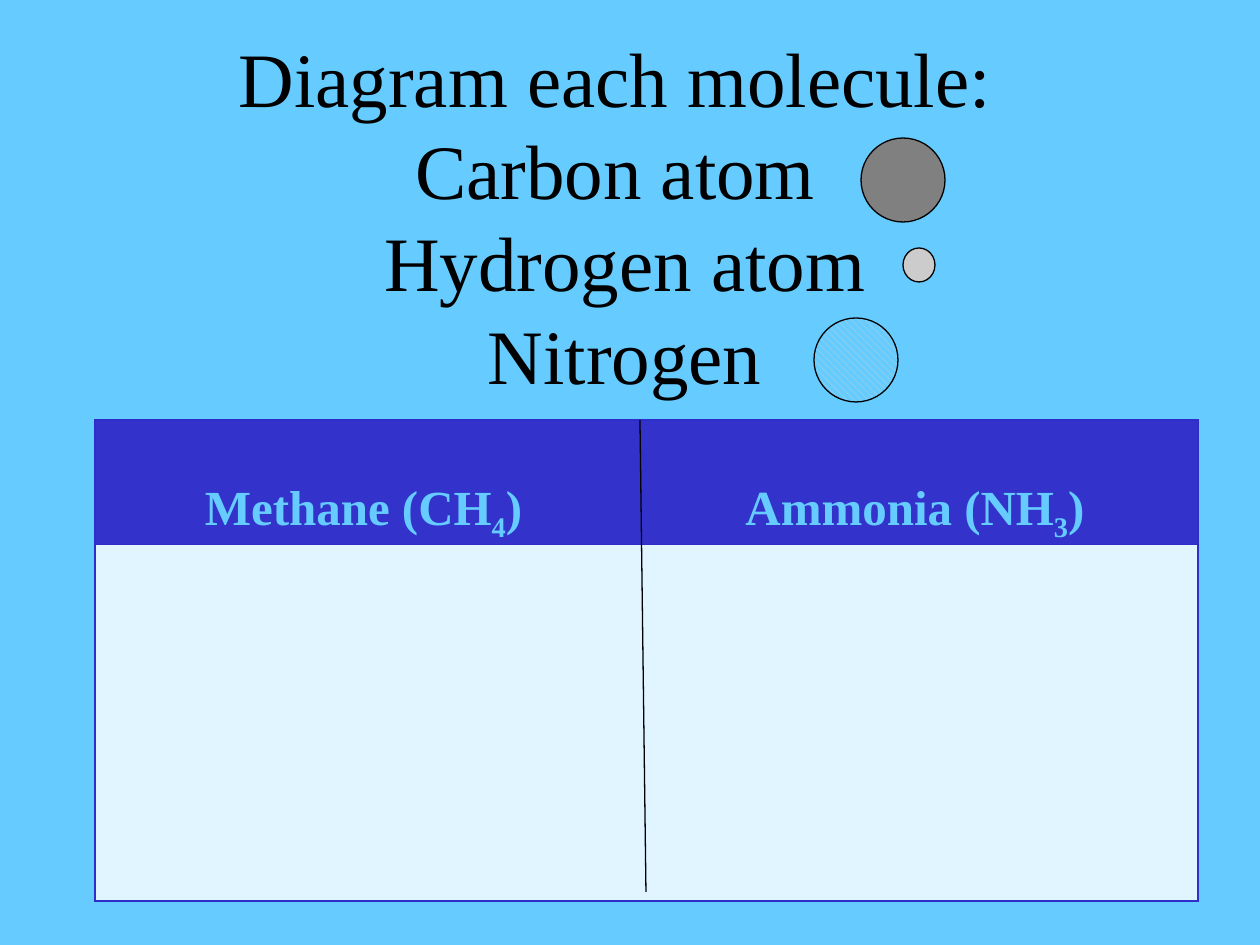
from typing import NamedTuple

from lxml import etree
from pptx import Presentation
from pptx.dml.color import RGBColor
from pptx.enum.dml import MSO_PATTERN
from pptx.enum.shapes import MSO_CONNECTOR, MSO_SHAPE
from pptx.enum.text import MSO_ANCHOR, MSO_AUTO_SIZE, PP_ALIGN
from pptx.oxml.ns import qn
from pptx.util import Emu, Pt

OVAL = MSO_SHAPE.OVAL
LINE = MSO_CONNECTOR.STRAIGHT
HATCH = MSO_PATTERN.WIDE_DOWNWARD_DIAGONAL
MIDDLE = MSO_ANCHOR.MIDDLE
CENTER = PP_ALIGN.CENTER
FIXED = MSO_AUTO_SIZE.NONE

FACE = "Times New Roman"
SKY, BLACK, GREY, SILVER = "66CCFF", "000000", "808080", "CCCCCC"
HEAD, BODY, EDGE = "3333CC", "E0F5FF", "2E2ECB"
THIN = Pt(0.75)


class Atom(NamedTuple):
    left: int
    top: int
    width: int
    height: int
    color: str
    hatched: bool = False


class Formula(NamedTuple):
    name: str
    count: str


ATOMS = [
    Atom(861, 138, 84, 84, GREY),
    Atom(903, 248, 32, 34, SILVER),
    Atom(814, 318, 84, 84, SILVER, True),
]
FORMULAS = [Formula("Methane (CH", "4"), Formula("Ammonia (NH", "3")]
COLUMNS = [537, 566]
ROWS = [116, 357]


def px(count: int) -> Emu:
    return Emu(round(count * 914400 / 126))


def rgb(color: str) -> RGBColor:
    return RGBColor.from_string(color)


def style(font, size: int, color: str, bold: bool = False) -> None:
    font.name = FACE
    font.size = Pt(size)
    font.bold = bold
    font.color.rgb = rgb(color)


def add_title(slide) -> None:
    title = slide.shapes.title
    title.left, title.top = px(53), px(10)
    title.width, title.height = px(1144), px(410)
    frame = title.text_frame
    frame.word_wrap = True
    frame.auto_size = FIXED
    frame.vertical_anchor = MIDDLE
    frame.text = "Diagram each molecule: \vCarbon atom \vHydrogen atom\vNitrogen"
    text = frame.paragraphs[0]
    text.alignment = CENTER
    style(text.font, 44, BLACK)


def add_atom(slide, atom: Atom) -> None:
    shape = slide.shapes.add_shape(OVAL, *map(px, atom[:4]))
    shape.shadow.inherit = False
    if atom.hatched:
        shape.fill.patterned()
        shape.fill.pattern = HATCH
        shape.fill.fore_color.rgb = rgb(atom.color)
        shape.fill.back_color.rgb = rgb(SKY)
    else:
        shape.fill.solid()
        shape.fill.fore_color.rgb = rgb(atom.color)
    shape.line.color.rgb = rgb(BLACK)
    shape.line.width = THIN


def set_edge(cell, side: str, shown: bool) -> None:
    props = cell._tc.get_or_add_tcPr()
    edge = etree.SubElement(props, qn(f"a:ln{side}"), w=str(THIN))
    if shown:
        fill = etree.SubElement(edge, qn("a:solidFill"))
        etree.SubElement(fill, qn("a:srgbClr"), val=EDGE)
    else:
        etree.SubElement(edge, qn("a:noFill"))


def write_head(cell, item: Formula) -> None:
    text = cell.text_frame.paragraphs[0]
    text.alignment = CENTER
    text.line_spacing = 2.0
    for part in (item.name, item.count, ")"):
        run = text.add_run()
        run.text = part
        style(run.font, 28, SKY, True)
        if part == item.count:
            run.font._element.set("baseline", "-25000")


def add_grid(slide) -> None:
    frame = slide.shapes.add_table(
        len(ROWS), len(COLUMNS), px(95), px(420), px(sum(COLUMNS)), px(sum(ROWS))
    )
    table = frame.table
    table.horz_banding = False
    for column, width in zip(table.columns, COLUMNS):
        column.width = px(width)
    for row, height in zip(table.rows, ROWS):
        row.height = px(height)
    for y in range(len(ROWS)):
        for x in range(len(COLUMNS)):
            cell = table.cell(y, x)
            cell.margin_left = cell.margin_right = px(9)
            cell.margin_top = cell.margin_bottom = 0
            set_edge(cell, "L", x == 0)
            set_edge(cell, "R", x == len(COLUMNS) - 1)
            set_edge(cell, "T", True)
            set_edge(cell, "B", True)
            cell.fill.solid()
            cell.fill.fore_color.rgb = rgb(BODY if y else HEAD)
    for x, item in enumerate(FORMULAS):
        write_head(table.cell(0, x), item)


def add_rule(slide) -> None:
    rule = slide.shapes.add_connector(LINE, px(640), px(420), px(646), px(892))
    rule.line.color.rgb = rgb(BLACK)
    rule.line.width = THIN
    etree.SubElement(rule._element.spPr, qn("a:effectLst"))


def main() -> None:
    deck = Presentation()
    deck.slide_width, deck.slide_height = px(1260), px(945)
    slide = deck.slides.add_slide(deck.slide_layouts.get_by_name("Title Only"))
    back = slide.background.fill
    back.solid()
    back.fore_color.rgb = rgb(SKY)
    add_title(slide)
    add_grid(slide)
    for atom in ATOMS[:2]:
        add_atom(slide, atom)
    add_rule(slide)
    add_atom(slide, ATOMS[2])
    deck.save("out.pptx")


if __name__ == "__main__":
    main()
